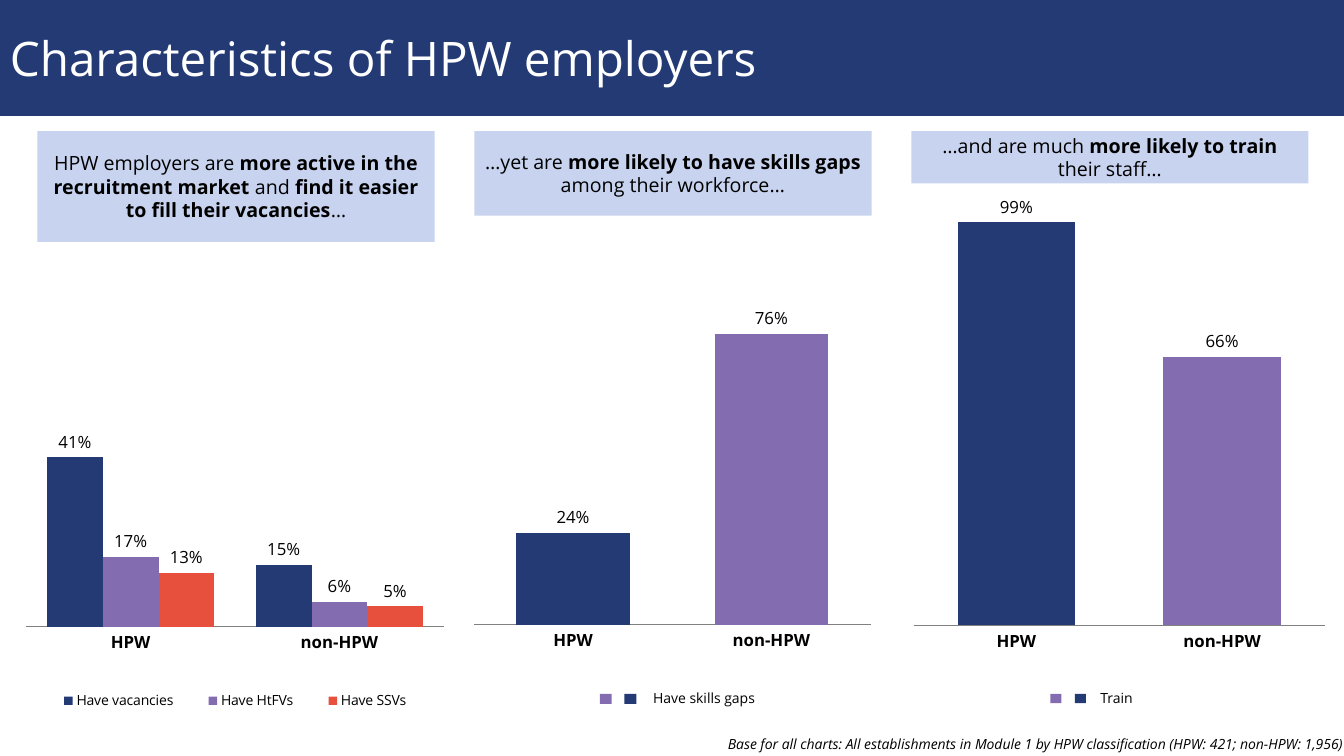
from lxml import etree
from pptx import Presentation
from pptx.chart.data import CategoryChartData
from pptx.dml.color import RGBColor
from pptx.enum.chart import (XL_CHART_TYPE, XL_LABEL_POSITION,
                             XL_LEGEND_POSITION, XL_TICK_MARK)
from pptx.enum.shapes import MSO_SHAPE
from pptx.enum.text import MSO_ANCHOR, PP_ALIGN
from pptx.oxml.ns import qn
from pptx.util import Pt

COLORS = {"navy": "233A75", "purple": "836DB0", "red": "E8503E",
          "pale": "C8D3EF", "white": "FFFFFF", "black": "000000", "grey": "808080"}
RGB = {name: RGBColor.from_string(value) for name, value in COLORS.items()}
FONT = "Open Sans"

prs = Presentation()
prs.slide_width, prs.slide_height = Pt(960), Pt(540)
s = prs.slides.add_slide(prs.slide_layouts[6])


def add_box(box, runs=(), fill=None, size=14, color="black", align=PP_ALIGN.CENTER):
    """Rectangle, or text box when no fill is given; runs are (text, bold)."""
    box = [Pt(v) for v in box]
    if fill:
        sp = s.shapes.add_shape(MSO_SHAPE.RECTANGLE, *box)
        sp.shadow.inherit = False
        sp.fill.solid()
        sp.fill.fore_color.rgb = RGB[fill]
        sp.line.fill.background()
    else:
        sp = s.shapes.add_textbox(*box)
    tf = sp.text_frame
    tf.word_wrap = True
    if runs and fill:
        tf.vertical_anchor = MSO_ANCHOR.MIDDLE
    p = tf.paragraphs[0]
    p.alignment = align
    for text, bold in runs:
        r = p.add_run()
        r.text = text
        r.font.name, r.font.size, r.font.bold = FONT, Pt(size), bold
        r.font.color.rgb = RGB[color]
    return sp


def set_layout(parent, index, target, box):
    """Place a plot area or legend by fractions of its chart."""
    for old in parent.findall(qn("c:layout")):
        parent.remove(old)
    layout = etree.Element(qn("c:layout"))
    manual = etree.SubElement(layout, qn("c:manualLayout"))
    parts = [("xMode", "edge"), ("yMode", "edge"), *zip("xywh", box)]
    if target:
        parts.insert(0, ("layoutTarget", target))
    for tag, value in parts:
        etree.SubElement(manual, qn("c:" + tag)).set("val", str(value))
    parent.insert(index, layout)


# Charts: frame, plot area, series
recruitment = [("Have vacancies", (0.41, 0.15), "navy"),
               ("Have HtFVs", (0.17, 0.06), "purple"),
               ("Have SSVs", (0.13, 0.05), "red")]
charts = [
    ((7.9, 152.6, 320.4, 384.5), (0.034, 0, 0.931, 0.768), recruitment),
    ((327.6, 172.8, 305.3, 363.6), (0.036, 0, 0.928, 0.752),
     [("Have skills gaps", (0.24, 0.76), "red")]),
    ((641.5, 126, 316.1, 370.8), (0.035, 0.081, 0.93, 0.784),
     [("Train", (0.99, 0.66), "red")]),
]
for frame, plot_box, series_list in charts:
    data = CategoryChartData(number_format="0%")
    data.categories = ["HPW", "non-HPW"]
    for name, values, _ in series_list:
        data.add_series(name, values)
    chart = s.shapes.add_chart(XL_CHART_TYPE.COLUMN_CLUSTERED,
                               *[Pt(v) for v in frame], data).chart
    chart.has_title = False
    chart.font.name, chart.font.size = FONT, Pt(12)
    chart.font.color.rgb = RGB["black"]

    # Axes
    cat = chart.category_axis
    cat.major_tick_mark = XL_TICK_MARK.NONE
    cat.tick_labels.font.size, cat.tick_labels.font.bold = Pt(12), True
    cat.format.line.color.rgb = RGB["grey"]
    cat.format.line.width = Pt(0.75)
    val = chart.value_axis
    val.minimum_scale, val.maximum_scale = 0, 1
    val.has_major_gridlines = False
    val.visible = False

    # Columns and value labels
    plot = chart.plots[0]
    plot.gap_width, plot.overlap = 75, 0
    plot.vary_by_categories = False
    plot.has_data_labels = True
    labels = plot.data_labels
    labels.show_value = True
    labels.number_format, labels.number_format_is_linked = "0%", False
    labels.position = XL_LABEL_POSITION.OUTSIDE_END
    labels.font.size = Pt(12)
    for series, (_, _, color) in zip(plot.series, series_list):
        series.format.fill.solid()
        series.format.fill.fore_color.rgb = RGB[color]
    if len(series_list) == 1:
        for i, color in enumerate(("navy", "purple")):
            fill = plot.series[0].points[i].format.fill
            fill.solid()
            fill.fore_color.rgb = RGB[color]
    set_layout(chart._chartSpace.chart.plotArea, 0, "inner", plot_box)

    # Legend of the three-series chart
    chart.has_legend = len(series_list) > 1
    if chart.has_legend:
        legend = chart.legend
        legend.position = XL_LEGEND_POSITION.BOTTOM
        legend.include_in_layout = False
        legend.font.size = Pt(10)
        set_layout(legend._element, 1, None, (0.05, 0.87, 0.9, 0.07))

# Hand-made legends: left of first key, key width, key height, label
for left, width, height, label_left, label in [
        (428.4, 8.6, 7.2, 459.4, "Have skills gaps"),
        (750.2, 7.9, 6.5, 779, "Train")]:
    for i, color in enumerate(("purple", "navy")):
        add_box((left + 17.6 * i, 495.7, width, height), fill=color)
    add_box((label_left, 488.9, 103, 20), [(label, False)], size=10,
            align=PP_ALIGN.LEFT)

# Headline above each chart
headlines = [
    (79.2, [("HPW employers are ", False),
            ("more active in the recruitment market", True), (" and ", False),
            ("find it easier to fill their vacancies", True), ("…", False)]),
    (60.5, [("…yet are ", False), ("more likely to have skills gaps", True),
            (" among their workforce…", False)]),
    (37.4, [("…and are much ", False), ("more likely to train", True),
            (" their staff…", False)]),
]
for i, (height, runs) in enumerate(headlines):
    add_box((26.8 + 312.1 * i, 93.6, 283.7, height), runs, fill="pale")

# Title band
add_box((0, 0, 960, 82.8), [("Characteristics of HPW employers", False)],
        fill="navy", size=34, color="white", align=PP_ALIGN.LEFT)

# Base note
note = add_box((424.1, 524.9, 535.7, 13.7),
               [("Base for all charts: All establishments in Module 1 by HPW "
                 "classification (HPW: 421; non-HPW: 1,956)", False)],
               size=10, align=PP_ALIGN.RIGHT)
tf = note.text_frame
tf.margin_left = tf.margin_right = tf.margin_top = tf.margin_bottom = Pt(0.7)
tf.paragraphs[0].runs[0].font.italic = True

prs.save("out.pptx")
